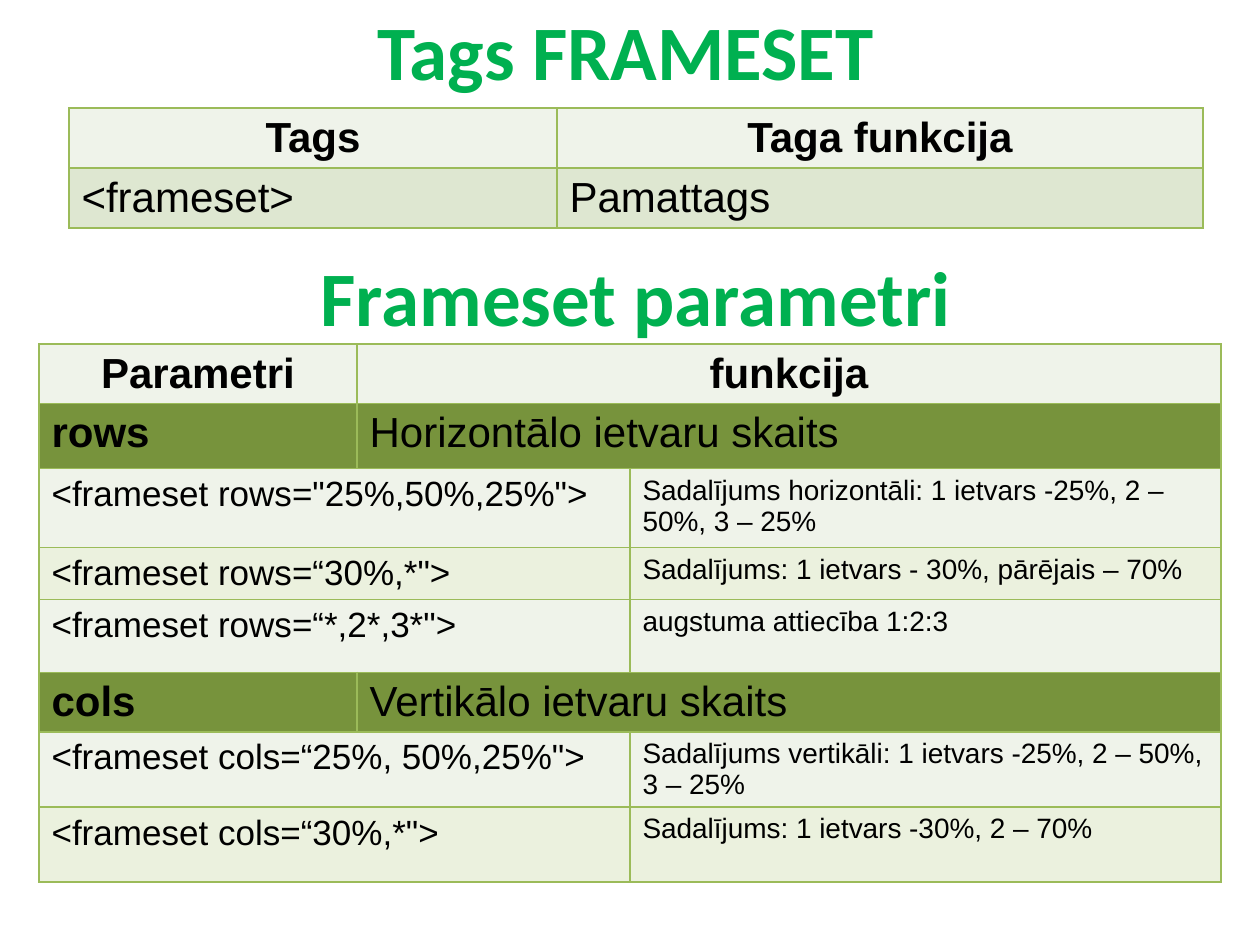
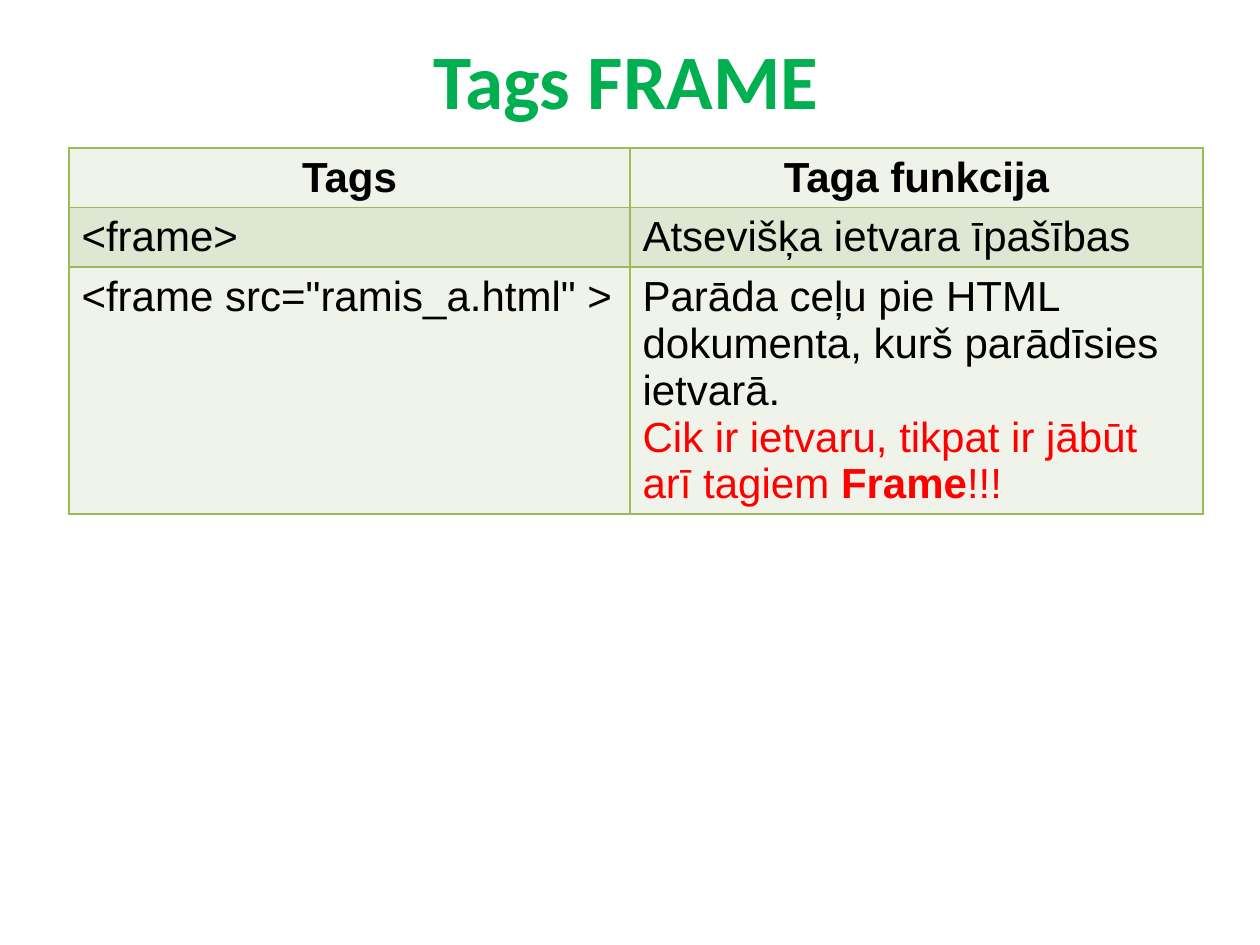
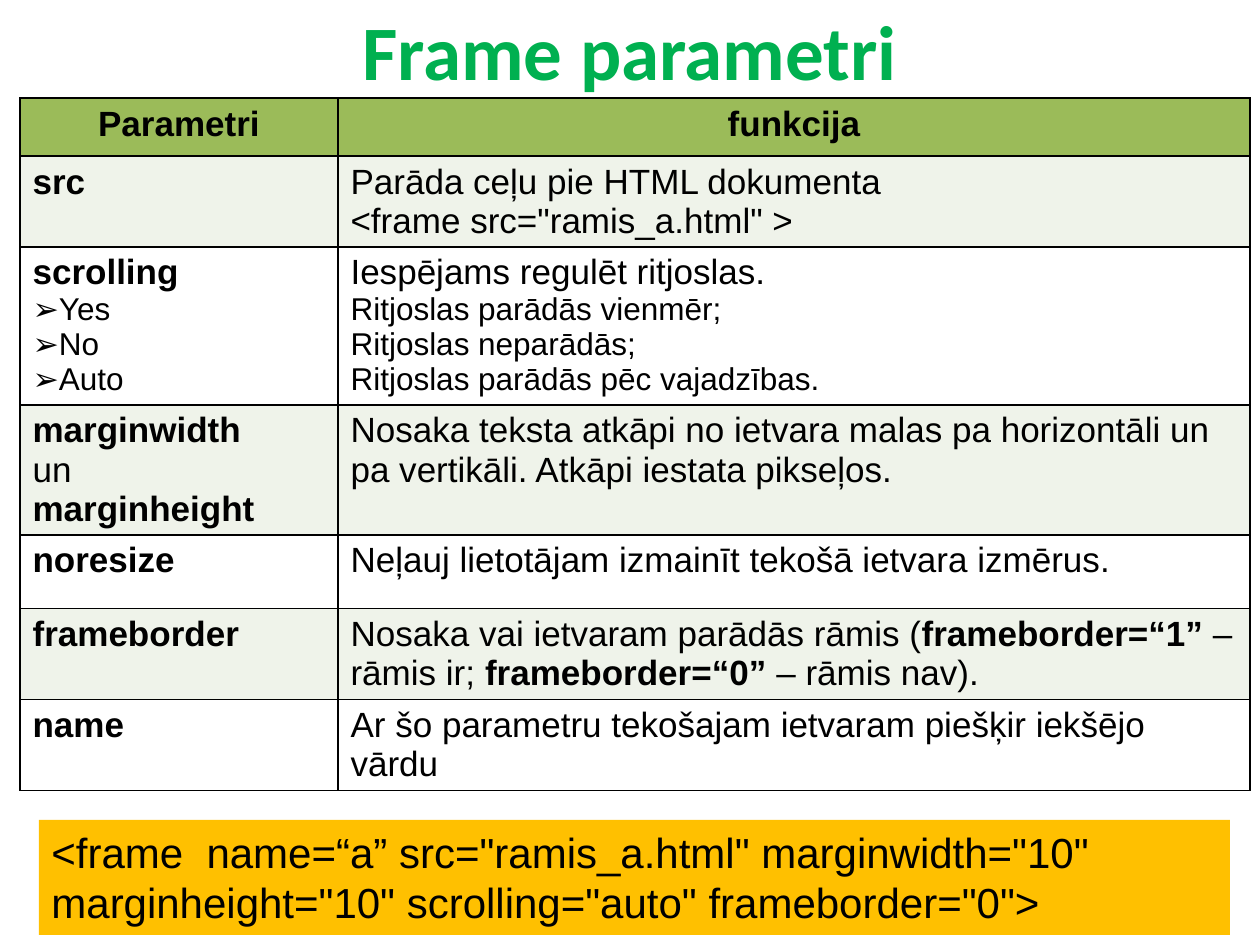
from pptx import Presentation
from pptx.dml.color import RGBColor as RGB
from pptx.enum.shapes import MSO_SHAPE as Shape
from pptx.enum.text import MSO_ANCHOR as Anchor, PP_ALIGN as Align
from pptx.oxml import parse_xml
from pptx.oxml.ns import nsdecls, qn
from pptx.util import Pt
from lxml.etree import SubElement

PX = 914400 / 126
PITCH = 1.116  # line height in table cells, per point of type

BLACK = RGB(0x00, 0x00, 0x00)
WHITE = RGB(0xFF, 0xFF, 0xFF)
GREEN = RGB(0x00, 0xB0, 0x50)
RED = RGB(0xFF, 0x00, 0x00)
AMBER = RGB(0xFF, 0xC0, 0x00)
LEAF = RGB(0x9B, 0xBB, 0x59)
OLIVE = RGB(0x77, 0x93, 0x3C)
MIST = RGB(0xEF, 0xF3, 0xEA)
SAGE = RGB(0xDE, 0xE7, 0xD1)
CREAM = RGB(0xEB, 0xF1, 0xDE)

BOLD = "~"  # switches bold on and off inside a text


def emu(*sizes):
    return [round(size * PX) for size in sizes]


def style(run, size, color, face="Arial", bold=False):
    font = run.font
    font.name, font.size, font.bold = face, Pt(size), bold
    font.color.rgb = color


def write(frame, text, size, align=Align.LEFT):
    """Fill a frame with one paragraph per line of text."""
    frame.text = text
    for para in frame.paragraphs:
        para.alignment = align
        parts = para.text.split(BOLD)
        para.text = ""
        for i, part in enumerate(parts):
            if part:
                run = para.add_run()
                run.text = part
                style(run, size, BLACK, bold=i % 2 == 1)


def title(slide, text, box):
    frame = slide.shapes.add_textbox(*emu(*box)).text_frame
    frame.word_wrap = True
    frame.vertical_anchor = Anchor.MIDDLE
    frame.text = text
    para = frame.paragraphs[0]
    para.alignment = Align.CENTER
    style(para.runs[0], 44, GREEN, "Calibri", True)


def edge(cell, color):
    """Draw a one-point line on all four sides of a cell."""
    props = cell._tc.get_or_add_tcPr()
    for side in "LRTB":
        props.append(parse_xml(
            f'<a:ln{side} {nsdecls("a")} w="12700"><a:solidFill>'
            f'<a:srgbClr val="{color}"/></a:solidFill></a:ln{side}>'))


def grid(slide, spot, cols, rows, line):
    """Rows hold height, fill, text sizes and texts; None joins the left cell."""
    high = sum(row[0] for row in rows)
    table = slide.shapes.add_table(
        len(rows), len(cols), *emu(*spot, sum(cols), high)).table
    table.first_row = table.horz_banding = False
    for col, width in zip(table.columns, emu(*cols)):
        col.width = width
    for r, (height, fill, sizes, texts) in enumerate(rows):
        table.rows[r].height = emu(height)[0]
        align = Align.CENTER if r == 0 else Align.LEFT
        for c, (size, text) in enumerate(zip(sizes, texts)):
            cell = table.cell(r, c)
            edge(cell, line)
            cell.fill.solid()
            cell.fill.fore_color.rgb = fill
            if text is None:
                table.cell(r, c - 1).merge(cell)
            else:
                write(cell.text_frame, text, size, align)
                for para in cell.text_frame.paragraphs:
                    para.line_spacing = Pt(size * PITCH)
    return table


def bullet(para):
    props = para._p.get_or_add_pPr()
    props.set("marL", "0")
    props.set("indent", "0")
    SubElement(props, qn("a:buFont")).set("typeface", "Arial")
    SubElement(props, qn("a:buChar")).set("char", "➢")


def banner(slide, text, box):
    bar = slide.shapes.add_shape(Shape.RECTANGLE, *emu(*box))
    bar.shadow.inherit = False
    bar.fill.solid()
    bar.fill.fore_color.rgb = AMBER
    bar.line.fill.background()
    frame = bar.text_frame
    frame.word_wrap = True
    frame.vertical_anchor = Anchor.TOP
    write(frame, text, 24)


def frameset(slide):
    title(slide, "Tags FRAMESET", (59, -29, 1134, 158))
    big, code = (24, 24, 24), (20, 20, 16)
    grid(slide, (69, 108), (488, 646), [
        (60, MIST, big, ("~Tags~", "~Taga funkcija~")),
        (60, SAGE, big, ("<frameset>", "Pamattags")),
    ], LEAF)

    # Parameters
    title(slide, "Frameset parametri", (69, 237, 1134, 118))
    grid(slide, (39, 344), (318, 273, 591), [
        (59, MIST, big, ("~Parametri~", "~funkcija~", None)),
        (65, OLIVE, big, ("~rows~", "Horizontālo ietvaru skaits", None)),
        (79, MIST, code, ('<frameset rows="25%,50%,25%">', None,
                          "Sadalījums horizontāli: 1 ietvars -25%, 2 – 50%, 3 – 25%")),
        (52, CREAM, code, ('<frameset rows=“30%,*">', None,
                           "Sadalījums: 1 ietvars - 30%, pārējais – 70%")),
        (73, MIST, code, ('<frameset rows=“*,2*,3*">', None,
                          "augstuma attiecība 1:2:3")),
        (59, OLIVE, big, ("~cols~", "Vertikālo ietvaru skaits", None)),
        (75, MIST, code, ('<frameset cols=“25%, 50%,25%">', None,
                          "Sadalījums vertikāli: 1 ietvars -25%, 2 – 50%, 3 – 25%")),
        (75, CREAM, code, ('<frameset cols=“30%,*">', None,
                           "Sadalījums: 1 ietvars -30%, 2 – 70%")),
    ], LEAF)


def frame_tag(slide):
    title(slide, "Tags FRAME", (59, 0, 1134, 158))
    big = (24, 24)
    table = grid(slide, (69, 148), (561, 573), [
        (59, MIST, big, ("~Tags~", "~Taga funkcija~")),
        (59, SAGE, big, ("<frame>", "Atsevišķa ietvara īpašības")),
        (247, MIST, big, (
            '<frame src="ramis_a.html" >',
            "Parāda ceļu pie HTML dokumenta, kurš parādīsies ietvarā.\n"
            "Cik ir ietvaru, tikpat ir jābūt arī tagiem ~Frame~!!!")),
    ], LEAF)
    # Warning in red
    for run in table.cell(2, 1).text_frame.paragraphs[1].runs:
        run.font.color.rgb = RED


def options(slide):
    mid = (20, 20)
    table = grid(slide, (20, 98), (318, 912), [
        (58, LEAF, mid, ("~Parametri~", "~funkcija~")),
        (91, MIST, mid, ("~src~", "Parāda ceļu pie HTML dokumenta\n"
                                  '<frame src="ramis_a.html" >')),
        (158, WHITE, mid, ("~scrolling~\nYes\nNo\nAuto",
                           "Iespējams regulēt ritjoslas.\n"
                           "Ritjoslas parādās vienmēr;\n"
                           "Ritjoslas neparādās;\n"
                           "Ritjoslas parādās pēc vajadzības.")),
        (129, MIST, mid, ("~marginwidth~\nun\n~marginheight~",
                          "Nosaka teksta atkāpi no ietvara malas pa horizontāli "
                          "un pa vertikāli. Atkāpi iestata pikseļos.")),
        (74, WHITE, mid, ("~noresize~",
                          "Neļauj lietotājam izmainīt tekošā ietvara izmērus.")),
        (91, MIST, mid, ("~frameborder~",
                         "Nosaka vai ietvaram parādās rāmis (~frameborder=“1”~ – "
                         "rāmis ir; ~frameborder=“0”~ – rāmis nav).")),
        (91, WHITE, mid, ("~name~",
                          "Ar šo parametru tekošajam ietvaram piešķir iekšējo vārdu")),
    ], BLACK)
    # Values of scrolling, in smaller type
    for c in range(2):
        for para in table.cell(2, c).text_frame.paragraphs[1:]:
            para.runs[0].font.size = Pt(18)
            para.line_spacing = Pt(18 * PITCH)
            if c == 0:
                bullet(para)

    title(slide, "Frame parametri", (63, 9, 1134, 81))
    banner(slide, '<frame  name=“a” src="ramis_a.html" marginwidth="10" '
                  'marginheight="10" scrolling="auto" frameborder="0">',
           (39, 820, 1191, 115))


def main():
    deck = Presentation()
    deck.slide_width, deck.slide_height = emu(1260, 945)
    for build in (frameset, frame_tag, options):
        build(deck.slides.add_slide(deck.slide_layouts[6]))
    deck.save("out.pptx")


if __name__ == "__main__":
    main()
